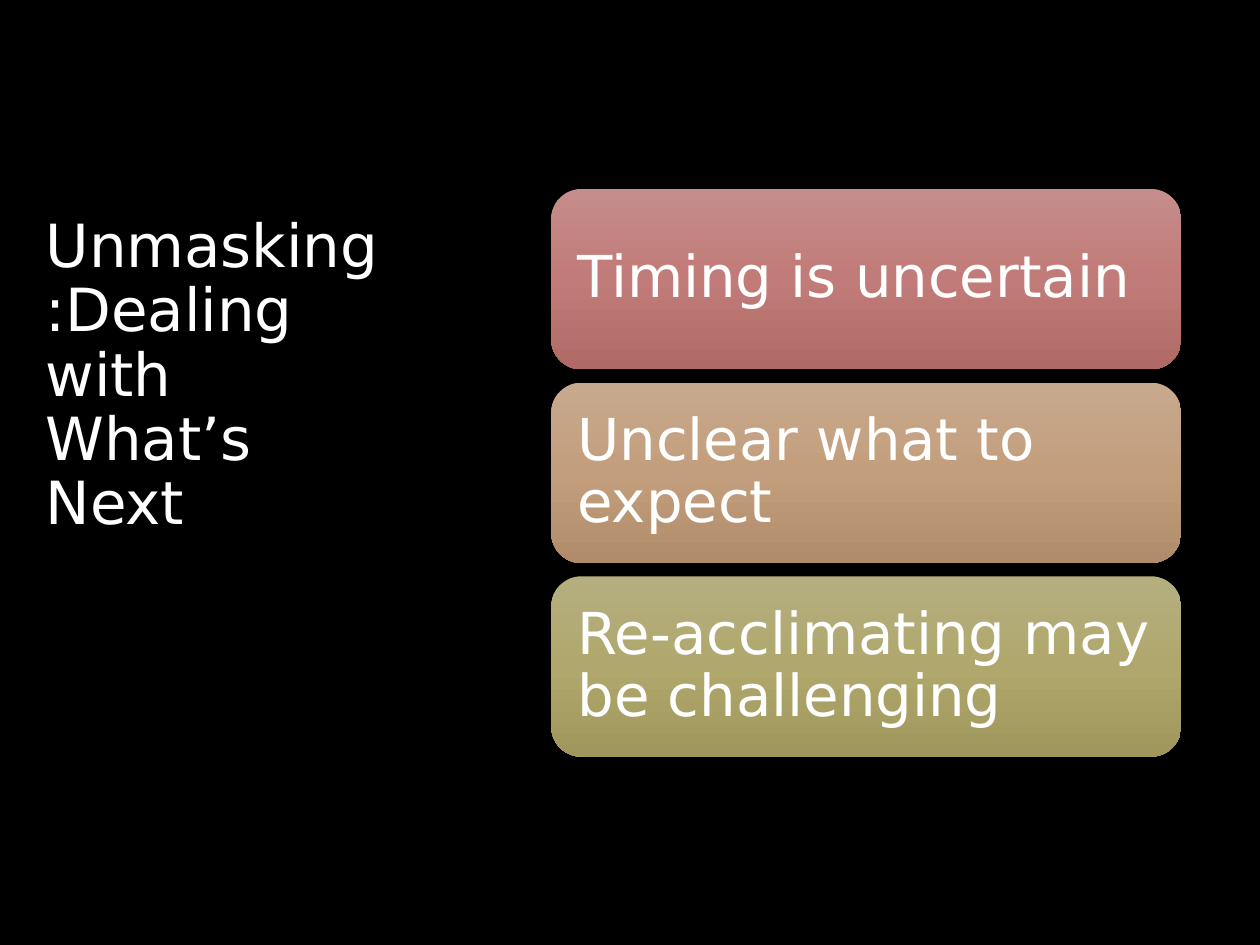
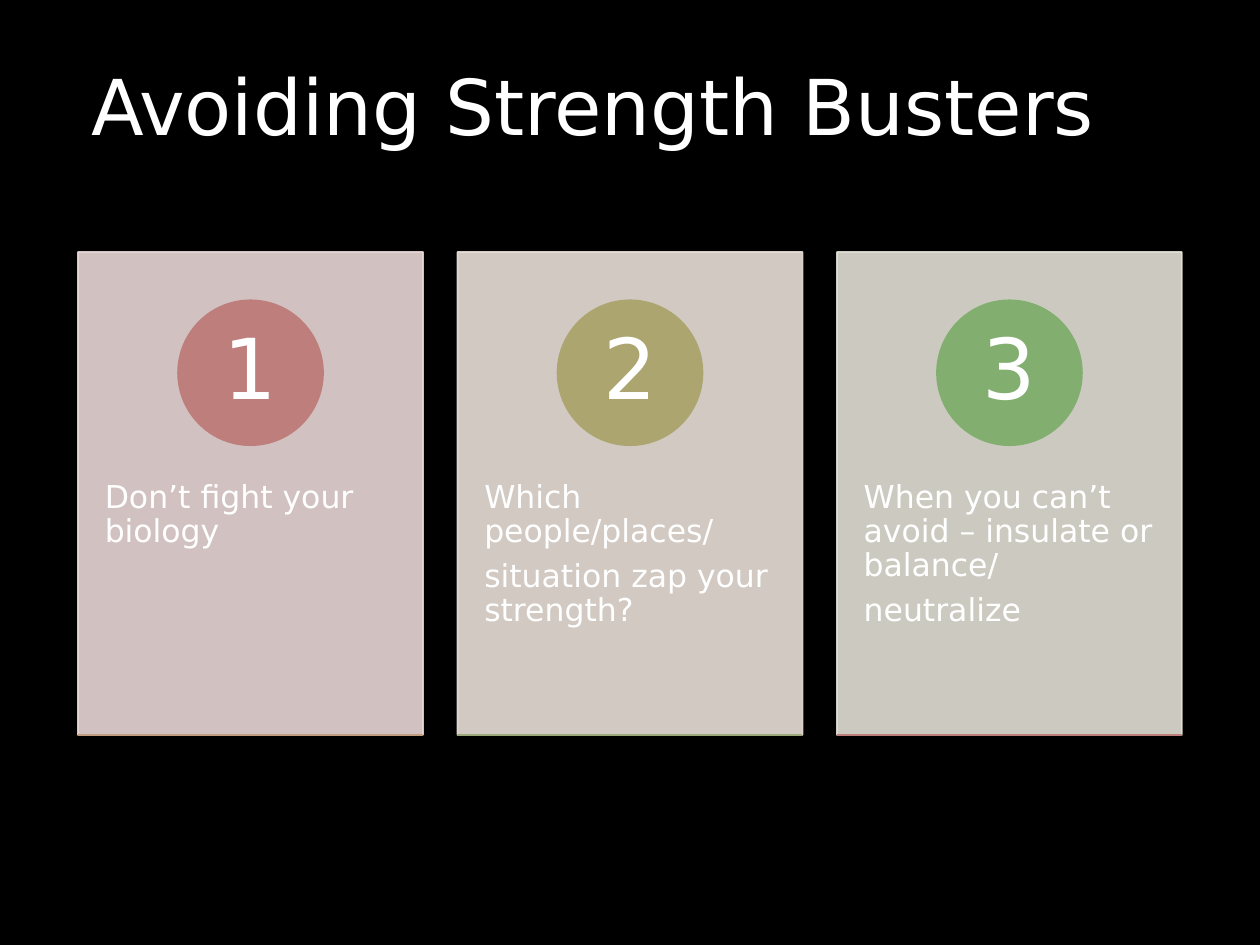
from copy import deepcopy

from lxml import etree
from pptx import Presentation
from pptx.dml.color import RGBColor
from pptx.enum.shapes import MSO_CONNECTOR, MSO_SHAPE
from pptx.enum.text import MSO_ANCHOR, PP_ALIGN
from pptx.oxml.ns import qn
from pptx.util import Pt

ROUNDED, RECT, OVAL = MSO_SHAPE.ROUNDED_RECTANGLE, MSO_SHAPE.RECTANGLE, MSO_SHAPE.OVAL
STRAIGHT = MSO_CONNECTOR.STRAIGHT
TOP, MIDDLE = MSO_ANCHOR.TOP, MSO_ANCHOR.MIDDLE
LEFT, CENTER = PP_ALIGN.LEFT, PP_ALIGN.CENTER

FONT = "DejaVu Sans"
BLACK = RGBColor(0x00, 0x00, 0x00)
WHITE = RGBColor(0xFF, 0xFF, 0xFF)
ROSE = RGBColor(0xBE, 0x7E, 0x7B)
ROSE_PALE = RGBColor(0xE8, 0xD8, 0xD7)
ROSE_GRADIENT = (RGBColor(0xC5, 0x8D, 0x8B), RGBColor(0xC1, 0x7B, 0x78), RGBColor(0xB0, 0x6A, 0x66))
TAN = RGBColor(0xC0, 0x9E, 0x7F)
TAN_PALE = RGBColor(0xE8, 0xDF, 0xD8)
TAN_GRADIENT = (RGBColor(0xC7, 0xA9, 0x8E), RGBColor(0xC3, 0x9E, 0x7C), RGBColor(0xB1, 0x8C, 0x6A))
OLIVE = RGBColor(0xAC, 0xA5, 0x6F)
OLIVE_PALE = RGBColor(0xE3, 0xE1, 0xD5)
OLIVE_GRADIENT = (RGBColor(0xB5, 0xAF, 0x80), RGBColor(0xAF, 0xA7, 0x6C), RGBColor(0x9F, 0x97, 0x5C))
SAGE = RGBColor(0x9B, 0xA9, 0x7B)
GREEN = RGBColor(0x82, 0xAE, 0x70)

CONCERNS = [
    ("Timing is uncertain", ROSE_GRADIENT),
    ("Unclear what to expect", TAN_GRADIENT),
    ("Re-acclimating may be challenging", OLIVE_GRADIENT),
]
BUSTERS = [
    (["Don’t fight your biology"], ROSE_PALE, ROSE, TAN),
    (["Which people/places/", "situation zap your strength?"], TAN_PALE, OLIVE, SAGE),
    (["When you can’t avoid – insulate or balance/", "neutralize"], OLIVE_PALE, GREEN, ROSE),
]


def set_all(obj, values):
    """Set each attribute named in a dict of format values."""
    for name, value in values.items():
        setattr(obj, name, value)


def write(sp, lines, size, margins=(7.2, 3.6, 7.2, 3.6), anchor=TOP, align=LEFT, after=0.35):
    """Fill a shape with paragraphs of white text."""
    tf = sp.text_frame
    sides = ("margin_left", "margin_top", "margin_right", "margin_bottom")
    set_all(tf, {"word_wrap": True, "vertical_anchor": anchor})
    set_all(tf, dict(zip(sides, map(Pt, margins))))
    for i, line in enumerate(lines):
        p = tf.add_paragraph() if i else tf.paragraphs[0]
        set_all(p, {"alignment": align, "line_spacing": 0.9, "space_after": Pt(size * after)})
        r = p.add_run()
        r.text = line
        set_all(r.font, {"name": FONT, "size": Pt(size)})
        r.font.color.rgb = WHITE


def add_block(slide, kind, box, color=None):
    """Add a preset shape without shadow, filled and outlined in one colour."""
    sp = slide.shapes.add_shape(kind, *map(Pt, box))
    sp.shadow.inherit = False
    if color is None:
        sp.line.fill.background()
    else:
        sp.fill.solid()
        sp.fill.fore_color.rgb = color
        sp.line.color.rgb = color
        sp.line.width = Pt(1)
    return sp


def shade(sp, colors):
    """Give a shape a three-stop gradient running from top to bottom."""
    sp.fill.gradient()
    sp.fill.gradient_angle = 270
    stops = next(sp._element.spPr.iter(qn("a:gsLst")))
    stops.insert(1, deepcopy(stops[0]))
    for i, stop in enumerate(sp.fill.gradient_stops):
        stop.position = i / 2
        stop.color.rgb = colors[i]


def soften(sp, opacity):
    """Make fill and line of a shape partly transparent."""
    for color in sp._element.spPr.iter(qn("a:srgbClr")):
        etree.SubElement(color, qn("a:alpha"), val=str(opacity * 1000))


def add_rule(slide, left, top, width, color):
    """Draw a thin horizontal line."""
    line = slide.shapes.add_connector(STRAIGHT, Pt(left), Pt(top), Pt(left + width), Pt(top))
    line.line.color.rgb = color
    line.line.width = Pt(1)
    etree.SubElement(line._element.spPr, qn("a:effectLst"))


def add_slide(prs, title, box, size):
    """Add a black slide with its title."""
    slide = prs.slides.add_slide(prs.slide_layouts[6])
    slide.background.fill.solid()
    slide.background.fill.fore_color.rgb = BLACK
    write(slide.shapes.add_textbox(*map(Pt, box)), [title], size, after=0)
    return slide


def add_concerns(slide, box, gap=7.6):
    """Stack one gradient bar per concern in the box."""
    left, top, width, height = box
    bar_h = (height - gap * (len(CONCERNS) - 1)) / len(CONCERNS)
    for i, (text, colors) in enumerate(CONCERNS):
        sp = add_block(slide, ROUNDED, (left, top + i * (bar_h + gap), width, bar_h))
        shade(sp, colors)
        write(sp, [text], 33, (10, 10, 10, 10), MIDDLE)


def add_card(slide, box, number, lines, pale, badge, base):
    """Draw a card with a numbered badge, its text and a base line."""
    left, top, width, height = box
    card = add_block(slide, RECT, box, pale)
    soften(card, 90)
    write(card, lines, 18, (15.3, 131, 15.3, 31))
    d = 0.3 * height
    sp = add_block(slide, OVAL, (left + (width - d) / 2, top + 0.1 * height, d, d), badge)
    write(sp, [str(number)], 48, (6.5, 0.7, 6.5, 0.7), MIDDLE, CENTER)
    add_rule(slide, left, top + height, width, base)


def add_busters(slide, box, gap=19.7):
    """Set the numbered cards side by side in the box."""
    left, top, width, height = box
    card_w = (width - gap * (len(BUSTERS) - 1)) / len(BUSTERS)
    for i, buster in enumerate(BUSTERS):
        add_card(slide, (left + i * (card_w + gap), top, card_w, height), i + 1, *buster)


def main():
    """Build both slides and save the deck."""
    prs = Presentation()
    set_all(prs, {"slide_width": Pt(720), "slide_height": Pt(540)})
    slide = add_slide(prs, "Unmasking:Dealing with What’s Next", (19, 120, 206, 300), 34)
    add_concerns(slide, (315, 108, 360, 324.4))
    slide = add_slide(prs, "Avoiding Strength Busters", (45, 36, 645, 300), 44)
    add_busters(slide, (44.6, 144, 630.8, 276))
    prs.save("out.pptx")


if __name__ == "__main__":
    main()
